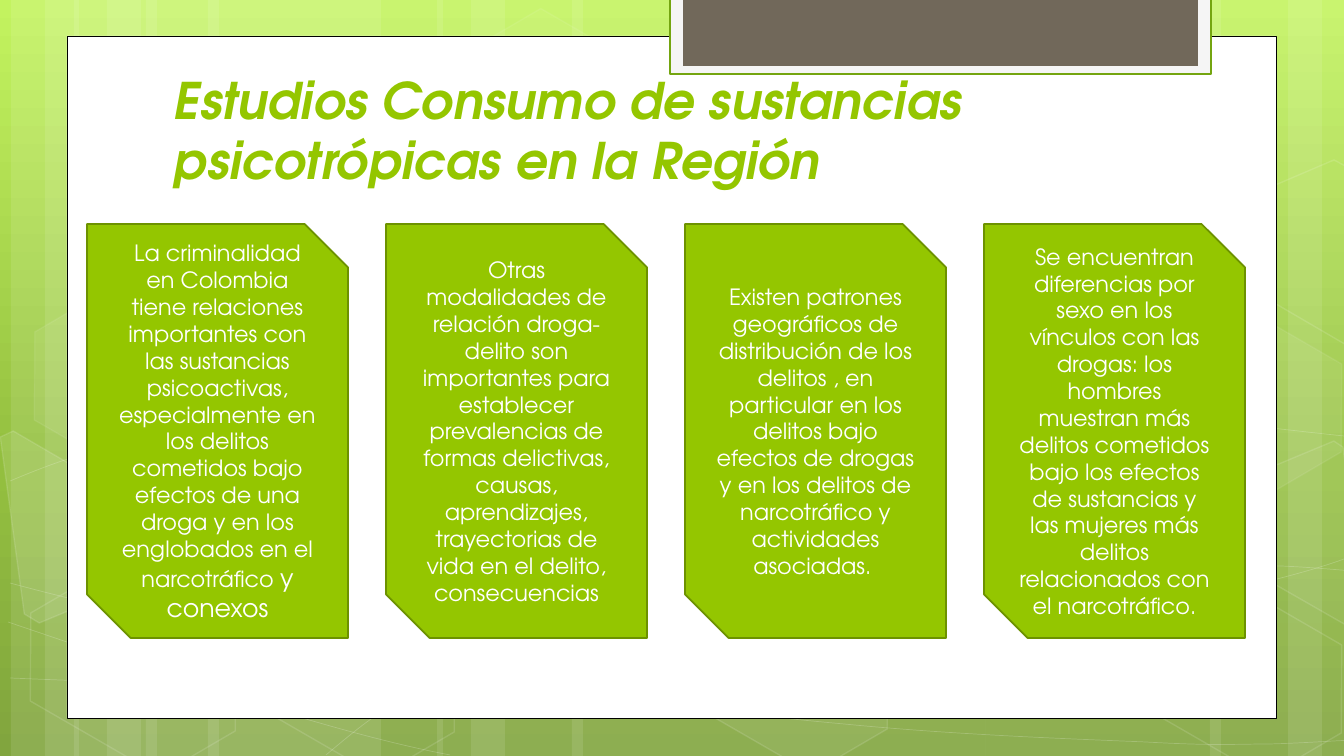
import copy
import math
from dataclasses import dataclass

import lxml.etree
import pptx
import pptx.dml.color
import pptx.enum.shapes
import pptx.enum.text
import pptx.oxml.ns
import pptx.util

TITLE = "Estudios Consumo de sustancias psicotrópicas en la Región"
CARDS = [  # runs of (text, size name)
    [("La criminalidad en Colombia tiene relaciones importantes con las sustancias psicoactivas, "
      "especialmente en los delitos cometidos bajo efectos de una droga y en los englobados en el "
      "narcotráfico ", "body"), ("y conexos", "large")],
    [("Otras modalidades de relación droga-delito son importantes para establecer prevalencias de "
      "formas delictivas, causas, aprendizajes, trayectorias de vida en el delito, consecuencias",
      "body")],
    [("Existen patrones geográficos de distribución de los delitos , en particular en los delitos "
      "bajo efectos de drogas y en los delitos de narcotráfico y actividades asociadas. ", "body")],
    [("Se encuentran diferencias por sexo en los vínculos con las drogas: los hombres muestran más "
      "delitos cometidos bajo los efectos de sustancias y las mujeres más delitos relacionados con "
      "el narcotráfico.", "body")],
]

# Backdrop, in px
BANDS = [(146, 235), (11, 68), (45, 112), (208, 235), (74, 67), (107, 112), (986, 235),
         (1288, 68), (1210, 112), (572, 414), (437, 68), (471, 112)]  # left, width
CURVES = [  # start point, then cubic segments: two handles and an end point
    [(10, 678), (83, 681), (155, 684), (256, 683), (357, 682), (481, 680), (615, 670),
     (750, 660), (941, 641), (1063, 622), (1187, 603), (1313, 573), (1354, 555)],
    [(10, 481), (48, 465), (87, 450), (163, 434), (240, 419), (348, 397), (467, 390),
     (587, 383), (731, 382), (879, 390), (1027, 398), (1273, 429), (1354, 437)],
    [(8, 622), (170, 677), (333, 733), (450, 755)],
    [(10, 583), (51, 594), (94, 605), (172, 621), (250, 636), (367, 661), (479, 678),
     (591, 696), (733, 714), (844, 724), (956, 735), (1075, 739), (1146, 742),
     (1217, 746), (1235, 744), (1270, 744), (1304, 743), (1330, 741), (1354, 740)],
    [(326, 755), (350, 735), (373, 715), (406, 697), (438, 678), (484, 659), (521, 644),
     (558, 630), (582, 624), (631, 614), (680, 604), (771, 590), (817, 583),
     (865, 576), (872, 576), (914, 574), (956, 570), (1021, 567), (1067, 566),
     (1114, 565), (1191, 566), (1191, 566), (1221, 566), (1251, 566), (1280, 566),
     (1305, 567), (1327, 569), (1340, 570), (1352, 571), (1348, 570), (1352, 571)],
]
HONEYCOMB = [  # centre, fill opacity, line opacity, outline where the slide edge cuts the cell
    ((567, 112), 4, 8, None),
    ((785, 670), 6, 12, None),
    ((48, 539), 10, 12, [(0, 437), (13, 431), (116, 491), (128, 586), (39, 623), (24, 614)]),
    ((133, 672), None, 12, None),
    ((137, 391), 7, 8, None),
    ((352, 673), None, 12, None),
    ((1239, 674), None, 12, None),
    ((1239, 393), 7, 8, None),
    ((1324, 524), 4, 12,
     [(1245, 478), (1334, 441), (1343, 447), (1368, 630), (1360, 633), (1257, 574)]),
    ((1324, 243), None, 12,
     [(1245, 198), (1334, 160), (1345, 166), (1368, 349), (1360, 353), (1257, 293)]),
]


@dataclass(frozen=True)
class Theme:
    font: str = "TeX Gyre Adventor"
    green: str = "94C600"
    card_edge: str = "6D9200"
    tab_edge: str = "74A510"
    tab: str = "F5F5F5"
    tab_core: str = "71685A"
    white: str = "FFFFFF"
    black: str = "000000"
    sky: tuple = ((0, "C3F35F"), (62, "93BF3F"), (100, "81A53E"))
    title: int = 36
    large: int = 18
    body: int = 16


THEME = Theme()
KIND = pptx.enum.shapes.MSO_SHAPE
PX = 914400 / 100.8
SLIDE_W, SLIDE_H = 1344, 756
CARD_LEFT, CARD_TOP, CARD_W, CARD_H, CARD_PITCH = 87, 224, 261, 414, 299
CELL_W, CELL_H, CELL_TILT = 236, 153, 30


def emu(px):
    return pptx.util.Emu(round(px * PX))


def rgb(code):
    return pptx.dml.color.RGBColor.from_string(code)


def paint(fill, color, opacity=100):
    if color is None:
        fill.background()
        return
    fill.solid()
    fill.fore_color.rgb = rgb(color)
    if opacity < 100:
        tint = fill._xPr.find(".//" + pptx.oxml.ns.qn("a:srgbClr"))
        lxml.etree.SubElement(tint, pptx.oxml.ns.qn("a:alpha")).set("val", str(opacity * 1000))


def style(shape, color, opacity=100, edge=None, edge_pt=1, edge_opacity=100):
    shape.shadow.inherit = False
    paint(shape.fill, color, opacity)
    paint(shape.line.fill, edge, edge_opacity)
    if edge:
        shape.line.width = pptx.util.Pt(edge_pt)


def add_preset(slide, kind, left, top, width, height):
    return slide.shapes.add_shape(kind, emu(left), emu(top), emu(width), emu(height))


def add_outline(slide, points, close):
    start, *rest = [(emu(x), emu(y)) for x, y in points]
    builder = slide.shapes.build_freeform(*start, scale=1.0)
    builder.add_line_segments(rest, close=close)
    return builder.convert_to_shape()


def add_curve(slide, points):
    """Draw a polyline through all points, then join every three lines into one cubic."""
    curve = add_outline(slide, points, False)
    lines = list(curve._element.iter(pptx.oxml.ns.qn("a:lnTo")))
    for first, second, last in zip(*[iter(lines)] * 3):
        first.tag = pptx.oxml.ns.qn("a:cubicBezTo")
        for line in (second, last):
            first.append(line[0])
            line.getparent().remove(line)
    return curve


def add_cell(slide, centre, outline):
    cx, cy = centre
    if outline:
        cos, sin = math.cos(math.radians(CELL_TILT)), math.sin(math.radians(CELL_TILT))
        upright = [(cx + (x - cx) * cos + (y - cy) * sin, cy - (x - cx) * sin + (y - cy) * cos)
                   for x, y in outline]
        cell = add_outline(slide, upright, True)
    else:
        cell = add_preset(slide, KIND.HEXAGON, cx - CELL_W / 2, cy - CELL_H / 2, CELL_W, CELL_H)
        cell.adjustments[0], cell.adjustments[1] = 0.285, 1.155
    cell.rotation = CELL_TILT
    return cell


def add_run(paragraph, text, size, color):
    run = paragraph.add_run()
    run.text = text
    run.font.name = THEME.font
    run.font.size = pptx.util.Pt(size)
    run.font.color.rgb = rgb(color)
    return run


def draw_backdrop(slide):
    sky = slide.background.fill
    sky.gradient()
    sky.gradient_angle = 270
    stops = sky._fill._gradFill.find(pptx.oxml.ns.qn("a:gsLst"))
    stops.append(copy.deepcopy(stops[-1]))
    for stop, (position, color) in zip(sky.gradient_stops, THEME.sky):
        stop.position = position / 100
        stop.color.rgb = rgb(color)

    for left, width in BANDS:
        style(add_preset(slide, KIND.RECTANGLE, left, 0, width, SLIDE_H), THEME.white, 10)
    for points in CURVES:
        style(add_curve(slide, points), None, edge=THEME.white, edge_pt=0.5, edge_opacity=20)
    for centre, opacity, edge_opacity, outline in HONEYCOMB:
        style(add_cell(slide, centre, outline), THEME.white if opacity else None, opacity,
              THEME.white, 1, edge_opacity)

    style(add_preset(slide, KIND.RECTANGLE, 67, 36, 1209, 682), THEME.white,
          edge=THEME.black, edge_pt=0.5)
    style(add_preset(slide, KIND.RECTANGLE, 670, -2, 541, 76), THEME.tab,
          edge=THEME.tab_edge, edge_pt=1.25)
    style(add_preset(slide, KIND.RECTANGLE, 683, -2, 515, 68), THEME.tab_core)


def draw_title(slide):
    heading = slide.shapes.add_textbox(emu(164), emu(106), emu(976), emu(150)).text_frame
    heading.word_wrap = True
    heading.vertical_anchor = pptx.enum.text.MSO_ANCHOR.BOTTOM
    heading.margin_bottom = emu(66)
    run = add_run(heading.paragraphs[0], TITLE, THEME.title, THEME.green)
    run.font.bold = run.font.italic = True


def draw_cards(slide):
    for index, runs in enumerate(CARDS):
        card = add_preset(slide, KIND.SNIP_2_DIAG_RECTANGLE, CARD_LEFT + index * CARD_PITCH,
                          CARD_TOP, CARD_W, CARD_H)
        style(card, THEME.green, edge=THEME.card_edge, edge_pt=1.25)
        card.text_frame.word_wrap = True
        card.text_frame.vertical_anchor = pptx.enum.text.MSO_ANCHOR.MIDDLE
        statement = card.text_frame.paragraphs[0]
        statement.alignment = pptx.enum.text.PP_ALIGN.CENTER
        for text, size in runs:
            add_run(statement, text, getattr(THEME, size), THEME.white)


def main():
    deck = pptx.Presentation()
    deck.slide_width, deck.slide_height = emu(SLIDE_W), emu(SLIDE_H)
    slide = deck.slides.add_slide(deck.slide_layouts[6])
    draw_backdrop(slide)
    draw_title(slide)
    draw_cards(slide)
    deck.save("out.pptx")


if __name__ == "__main__":
    main()
